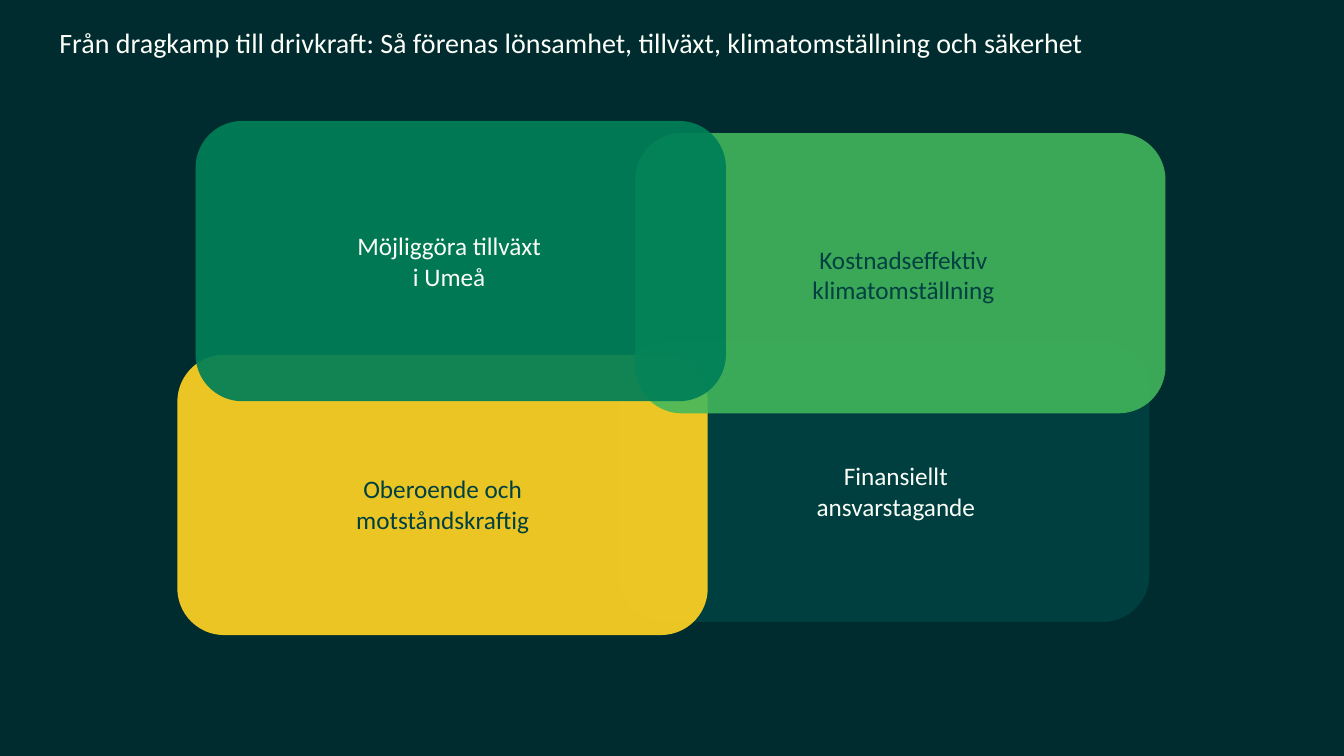
from lxml.etree import SubElement
from pptx import Presentation
from pptx.dml.color import RGBColor
from pptx.enum.shapes import MSO_SHAPE
from pptx.enum.text import MSO_ANCHOR, PP_ALIGN
from pptx.oxml.ns import qn
from pptx.util import Inches, Pt

NIGHT = RGBColor(0x01, 0x2C, 0x2F)
PETROL = RGBColor(0x00, 0x40, 0x41)
YELLOW = RGBColor(0xF8, 0xCE, 0x24)
LIGHT_GREEN = RGBColor(0x43, 0xB8, 0x5C)
GREEN = RGBColor(0x00, 0x7F, 0x58)
OFF_WHITE = RGBColor(0xFB, 0xFF, 0xF8)

CARD_W, CARD_H = 5.26, 2.78
LABEL_H = 0.71

prs = Presentation()
prs.slide_width, prs.slide_height = Inches(13.33), Inches(7.5)
s = prs.slides.add_slide(prs.slide_layouts[6])
s.background.fill.solid()
s.background.fill.fore_color.rgb = NIGHT


def add_text(text, left, top, width, height, size, color, wrap=True):
    sp = s.shapes.add_textbox(Inches(left), Inches(top), Inches(width), Inches(height))
    tf = sp.text_frame
    tf.word_wrap = wrap
    tf.vertical_anchor = MSO_ANCHOR.TOP
    p = tf.paragraphs[0]
    p.text = text
    p.font.name, p.font.size = "Calibri", Pt(size)
    p.font.color.rgb = color
    return p


# Overlapping cards, back to front: left, top, fill, opacity in percent
cards = [
    (6.14, 3.39, PETROL, 98),
    (1.76, 3.52, YELLOW, 95),
    (6.3, 1.32, LIGHT_GREEN, 89),
    (1.94, 1.2, GREEN, 92),
]
for left, top, color, opacity in cards:
    sp = s.shapes.add_shape(MSO_SHAPE.ROUNDED_RECTANGLE, Inches(left), Inches(top),
                            Inches(CARD_W), Inches(CARD_H))
    sp.shadow.inherit = False
    sp.line.fill.background()
    sp.fill.solid()
    sp.fill.fore_color.rgb = color
    rgb = sp.fill._xPr.find(qn("a:solidFill")).find(qn("a:srgbClr"))
    SubElement(rgb, qn("a:alpha")).set("val", str(opacity * 1000))

# Labels: text, left, top, width, colour, wrap
labels = [
    ("Oberoende och\vmotståndskraftig", 3.23, 4.65, 2.32, PETROL, False),
    ("Kostnadseffektiv klimatomställning", 7.59, 2.37, 2.74, PETROL, True),
    ("Finansiellt\vansvarstagande", 7.82, 4.52, 2.13, OFF_WHITE, False),
    ("Möjliggöra tillväxt i Umeå", 3.39, 2.24, 2.13, OFF_WHITE, True),
]
for text, left, top, width, color, wrap in labels:
    p = add_text(text, left, top, width, LABEL_H, 18, color, wrap)
    p.alignment = PP_ALIGN.CENTER

title = add_text("Från dragkamp till drivkraft: Så förenas lönsamhet, tillväxt, "
                 "klimatomställning och säkerhet", 0.49, 0.24, 12.28, 0.37, 20, OFF_WHITE)
title.line_spacing = 0.9

prs.save("out.pptx")
